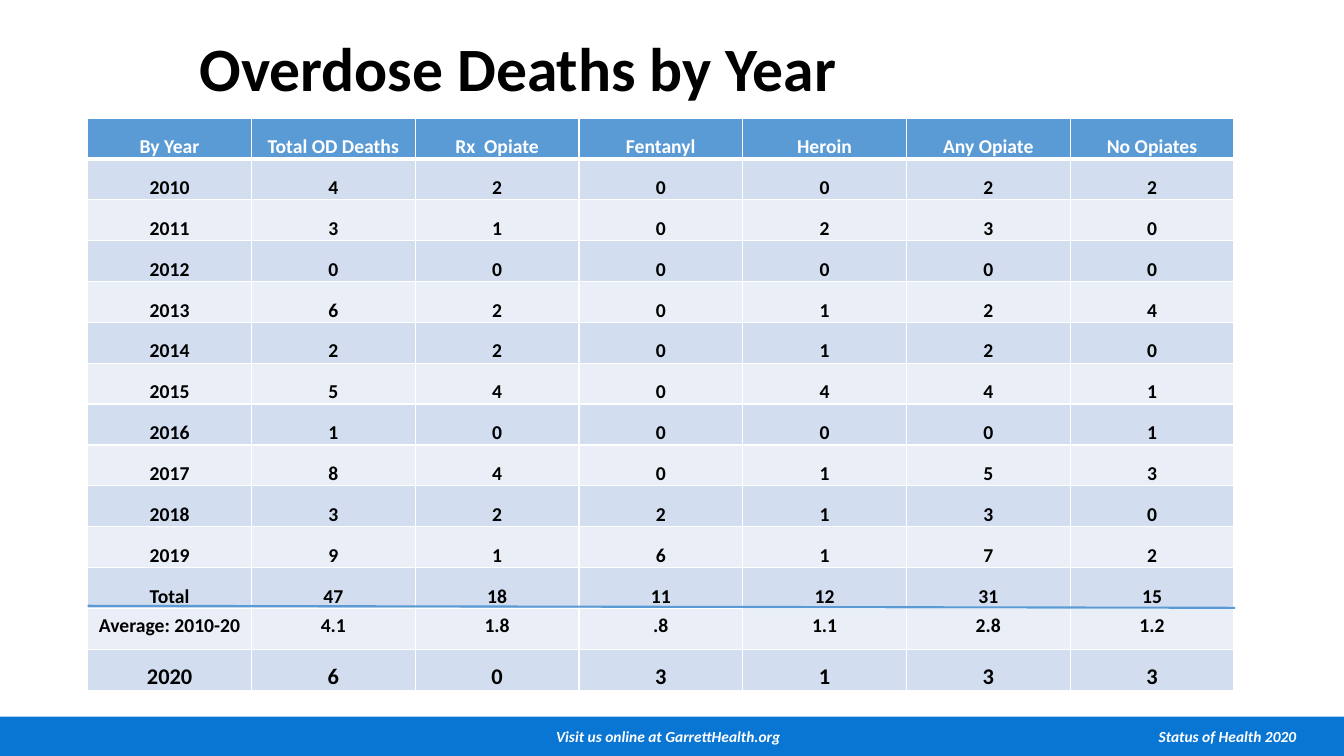
from dataclasses import dataclass

from lxml.etree import SubElement
from pptx import Presentation
from pptx.dml.color import RGBColor
from pptx.enum.shapes import MSO_CONNECTOR, MSO_SHAPE
from pptx.enum.text import MSO_ANCHOR as Anchor, PP_ALIGN as Align
from pptx.oxml.ns import qn
from pptx.util import Inches, Pt

COLORS = {
    "white": "FFFFFF", "black": "000000", "footer": "0A76D3",
    "header": "5B9BD5", "dark_band": "D2DEEF", "light_band": "EAEFF7",
}
HEADINGS = ("By Year", "Total OD Deaths", "Rx  Opiate", "Fentanyl",
            "Heroin", "Any Opiate", "No Opiates")
TABLE_WIDTH, TABLE_HEIGHT = 11.37, 5.68
FOOTER_TABS = (("ctr", 6.63), ("r", 12.86))


@dataclass(frozen=True)
class TableRow:
    values: tuple[str, ...]
    size: int = 14
    color: str = "black"
    anchor: Anchor = Anchor.BOTTOM
    margins: tuple[float, ...] = (0.01, 0.01, 0.01, 0)


def count_row(text: str, **options) -> TableRow:
    return TableRow(tuple(text.split()), **options)


ROWS = (
    TableRow(HEADINGS, color="white"),
    count_row("2010 4 2 0 0 2 2"),
    count_row("2011 3 1 0 2 3 0"),
    count_row("2012 0 0 0 0 0 0"),
    count_row("2013 6 2 0 1 2 4"),
    count_row("2014 2 2 0 1 2 0"),
    count_row("2015 5 4 0 4 4 1"),
    count_row("2016 1 0 0 0 0 1"),
    count_row("2017 8 4 0 1 5 3"),
    count_row("2018 3 2 2 1 3 0"),
    count_row("2019 9 1 6 1 7 2"),
    count_row("Total 47 18 11 12 31 15"),
    TableRow(("Average: 2010-20", "4.1", "1.8", ".8", "1.1", "2.8", "1.2"),
             anchor=Anchor.TOP, margins=(0.1, 0.05, 0.1, 0.05)),
    count_row("2020 6 0 3 1 3 3", size=16),
)


def rgb(name: str) -> RGBColor:
    return RGBColor.from_string(COLORS[name])


def write_text(text_frame, text: str, *, size: float, color: str = "black",
               italic: bool = False, align: Align = Align.LEFT,
               line_spacing: float = 1.0) -> None:
    paragraph = text_frame.paragraphs[0]
    paragraph.alignment = align
    paragraph.line_spacing = line_spacing
    run = paragraph.add_run()
    run.text = text
    font = run.font
    font.name, font.size, font.bold, font.italic = "Calibri", Pt(size), True, italic
    font.color.rgb = rgb(color)


def set_borders(cell, widths: dict[str, float]) -> None:
    properties = cell._tc.get_or_add_tcPr()
    for side, width in widths.items():
        line = SubElement(properties, qn(f"a:ln{side}"), w=str(Pt(width)))
        fill = SubElement(line, qn("a:solidFill"))
        SubElement(fill, qn("a:srgbClr"), val=COLORS["white"])


def add_footer(slide) -> None:
    shape = slide.shapes.add_shape(
        MSO_SHAPE.RECTANGLE, Inches(0), Inches(7.11), Inches(13.33), Inches(0.39))
    shape.shadow.inherit = False
    shape.fill.solid()
    shape.fill.fore_color.rgb = rgb("footer")
    shape.line.fill.background()
    text_frame = shape.text_frame
    text_frame.margin_left = text_frame.margin_right = 0
    text_frame.vertical_anchor = Anchor.MIDDLE
    tabs = SubElement(text_frame.paragraphs[0]._p.get_or_add_pPr(), qn("a:tabLst"))
    for alignment, position in FOOTER_TABS:
        SubElement(tabs, qn("a:tab"), pos=str(Inches(position)), algn=alignment)
    write_text(text_frame, "\tVisit us online at GarrettHealth.org\tStatus of Health 2020",
               size=11, color="white", italic=True)


def add_deaths_table(slide) -> None:
    table = slide.shapes.add_table(
        len(ROWS), len(HEADINGS), Inches(0.87), Inches(1.17),
        Inches(TABLE_WIDTH), Inches(TABLE_HEIGHT)).table
    for column in table.columns:
        column.width = Inches(TABLE_WIDTH / len(HEADINGS))
    for index, row in enumerate(ROWS):
        table.rows[index].height = Inches(TABLE_HEIGHT / len(ROWS))
        band = "header" if index == 0 else "dark_band" if index % 2 else "light_band"
        borders = {"L": 1, "R": 1, "T": 3 if index == 1 else 1, "B": 3 if index == 0 else 1}
        for column_index, value in enumerate(row.values):
            cell = table.cell(index, column_index)
            set_borders(cell, borders)
            cell.fill.solid()
            cell.fill.fore_color.rgb = rgb(band)
            cell.vertical_anchor = row.anchor
            (cell.margin_left, cell.margin_top,
             cell.margin_right, cell.margin_bottom) = map(Inches, row.margins)
            write_text(cell.text_frame, value, size=row.size, color=row.color,
                       align=Align.CENTER)


def add_title(slide) -> None:
    text_frame = slide.shapes.add_textbox(
        Inches(1.88), Inches(0.24), Inches(10.29), Inches(0.94)).text_frame
    text_frame.word_wrap = True
    text_frame.vertical_anchor = Anchor.MIDDLE
    write_text(text_frame, "Overdose Deaths by Year", size=44, line_spacing=0.9)


def add_total_rule(slide) -> None:
    connector = slide.shapes.add_connector(
        MSO_CONNECTOR.STRAIGHT, Inches(0.87), Inches(6.01), Inches(12.25), Inches(6.03))
    connector.line.color.rgb = rgb("header")
    connector.line.width = Pt(1.5)
    SubElement(connector._element.spPr, qn("a:effectLst"))


def main() -> None:
    """Build the overdose deaths slide and save it."""
    presentation = Presentation()
    presentation.slide_width = Inches(13.33)
    presentation.slide_height = Inches(7.5)
    slide = presentation.slides.add_slide(presentation.slide_layouts[6])
    add_footer(slide)
    add_deaths_table(slide)
    add_title(slide)
    add_total_rule(slide)
    presentation.save("out.pptx")


if __name__ == "__main__":
    main()
